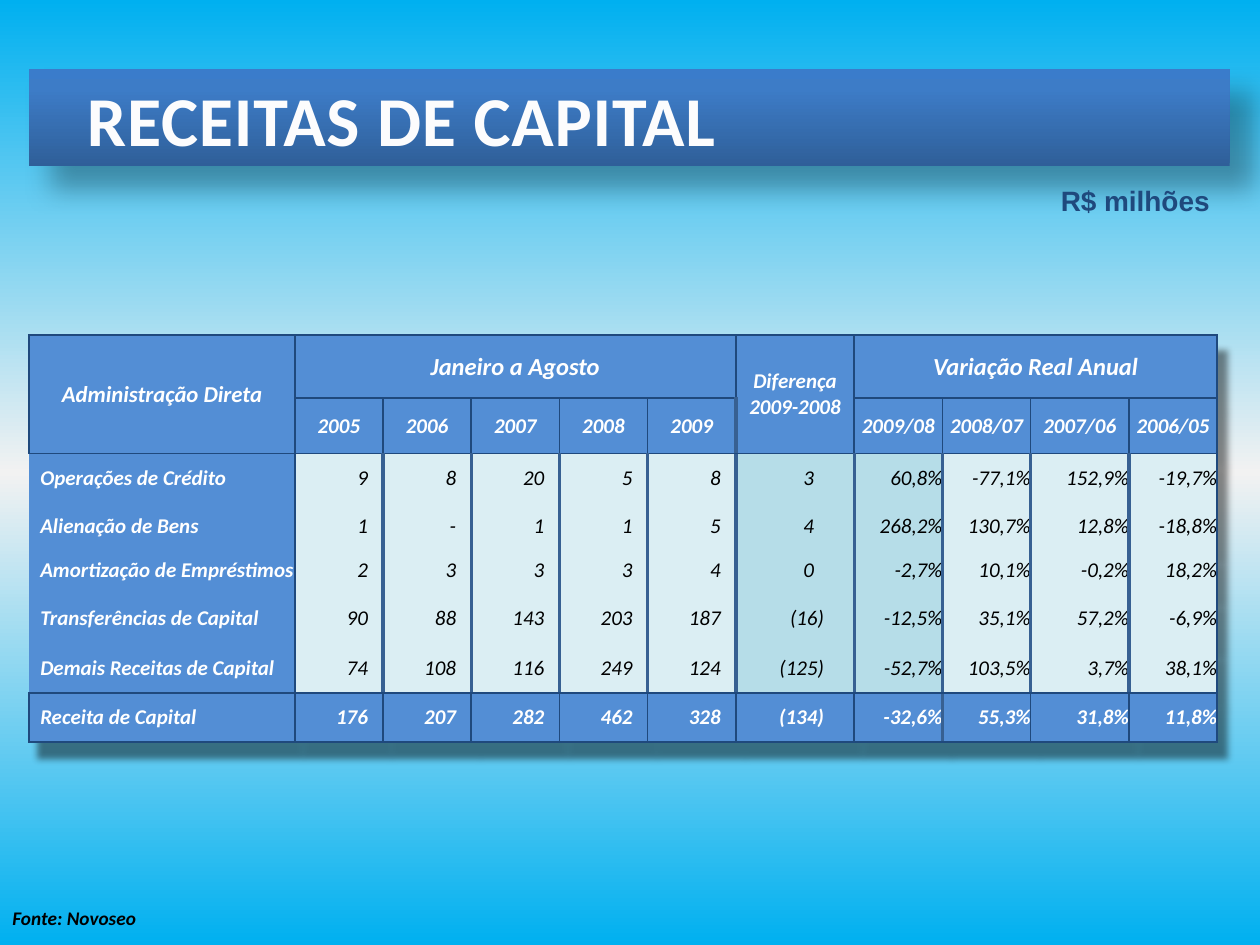
from dataclasses import dataclass

from lxml import etree
from pptx import Presentation
from pptx.dml.color import RGBColor
from pptx.enum.shapes import MSO_SHAPE
from pptx.enum.text import MSO_ANCHOR, MSO_AUTO_SIZE, PP_ALIGN
from pptx.oxml import parse_xml
from pptx.oxml.ns import nsdecls, qn
from pptx.util import Inches, Pt


@dataclass(frozen=True)
class Theme:
    width: float = 10
    height: float = 7.5
    font: str = "Calibri"
    unit_font: str = "Arial"
    sky: tuple = ((0, "00B0F0"), (50, "F2F2F2"), (100, "00B0F0"))
    banner: tuple = ((0, "2F5F99"), (80, "3D7CC7"), (100, "3A7CCB"))
    header: str = "538ED5"
    pale: str = "DBEEF3"
    accent: str = "B6DDE8"
    navy: str = "1F497D"
    divider: str = "376092"
    white: str = "FFFFFF"
    title_color: str = "FCFCFD"
    black: str = "000000"
    title: int = 40
    unit: int = 16
    group: int = 14
    corner: int = 13
    cell: int = 12
    source: int = 11


THEME = Theme()
THIN, THICK = (THEME.navy, 1), (THEME.divider, 2.25)

# Table content and grid, in inches
COLUMNS = [2.11] + [0.7] * 5 + [0.94, 0.7, 0.7, 0.78, 0.7]
ROWS = [0.5, 0.44, 0.39, 0.37, 0.34, 0.41, 0.39, 0.39]
DIFFERENCE, LAST = 6, len(COLUMNS) - 1
TOTAL = len(ROWS) - 1
GROUPS = [  # row, column, row span, column span, text, size
    (0, 0, 2, 1, "Administração Direta", THEME.corner),
    (0, 1, 1, 5, "Janeiro a Agosto", THEME.group),
    (0, 6, 2, 1, "Diferença\n2009-2008", THEME.cell),
    (0, 7, 1, 4, "Variação Real Anual", THEME.group),
]
PERIODS = {1: "2005", 2: "2006", 3: "2007", 4: "2008", 5: "2009",
           7: "2009/08", 8: "2008/07", 9: "2007/06", 10: "2006/05"}
REVENUES = [
    ("Operações de Crédito", "9 8 20 5 8 3 60,8% -77,1% 152,9% -19,7%"),
    ("Alienação de Bens", "1 - 1 1 5 4 268,2% 130,7% 12,8% -18,8%"),
    ("Amortização de Empréstimos", "2 3 3 3 4 0 -2,7% 10,1% -0,2% 18,2%"),
    ("Transferências de Capital", "90 88 143 203 187 (16) -12,5% 35,1% 57,2% -6,9%"),
    ("Demais Receitas de Capital", "74 108 116 249 124 (125) -52,7% 103,5% 3,7% 38,1%"),
    ("Receita de Capital", "176 207 282 462 328 (134) -32,6% 55,3% 31,8% 11,8%"),
]


def area(left, top, width, height):
    """Turn shares of the slide into lengths."""
    return (Inches(left * THEME.width), Inches(top * THEME.height),
            Inches(width * THEME.width), Inches(height * THEME.height))


def apply(target, values):
    for name, value in values.items():
        setattr(target, name, value)


def write(frame, text, size, color, align=PP_ALIGN.LEFT, font=THEME.font, bold=True, italic=False):
    frame.text = text
    for paragraph in frame.paragraphs:
        paragraph.alignment = align
        for run in paragraph.runs:
            apply(run.font, {"name": font, "size": Pt(size), "bold": bold, "italic": italic})
            run.font.color.rgb = RGBColor.from_string(color)


def set_gradient(fill, owner, stops):
    """Fill from bottom to top with the given stops."""
    fill.gradient()
    fill.gradient_angle = 90
    stop_list = owner.find(".//" + qn("a:gsLst"))
    for old in list(stop_list):
        stop_list.remove(old)
    for position, color in stops:
        stop = etree.SubElement(stop_list, qn("a:gs"), pos=str(position * 1000))
        etree.SubElement(stop, qn("a:srgbClr"), val=color)


def shadow(blur, distance, angle, alpha):
    return parse_xml(
        f'<a:effectLst {nsdecls("a")}><a:outerShdw blurRad="{Pt(blur)}" dist="{Pt(distance)}" '
        f'dir="{angle * 60000}" algn="tl" rotWithShape="0"><a:srgbClr val="{THEME.black}">'
        f'<a:alpha val="{alpha * 1000}"/></a:srgbClr></a:outerShdw></a:effectLst>')


def add_banner_title(slide):
    title = slide.shapes.title
    banner = slide.shapes.add_shape(MSO_SHAPE.RECTANGLE, *area(0.023, 0.073, 0.953, 0.103))
    title.element.addprevious(banner.element)
    banner.line.fill.background()
    set_gradient(banner.fill, banner.element, THEME.banner)
    banner.element.spPr.append(shadow(15, 18, 45, 30))

    left, top, width, height = area(0.055, 0.073, 0.922, 0.104)
    apply(title, {"left": left, "top": top, "width": width, "height": height})
    frame = title.text_frame
    apply(frame, {"vertical_anchor": MSO_ANCHOR.MIDDLE, "auto_size": MSO_AUTO_SIZE.NONE,
                  "margin_left": Inches(0.14)})
    write(frame, "RECEITAS DE CAPITAL", THEME.title, THEME.title_color)
    letters = frame.paragraphs[0].runs[0].font._element
    letters.set("spc", "50")
    letters.find(qn("a:latin")).addprevious(shadow(3, 3, 45, 40))


def add_label(slide, box, text, **style):
    frame = slide.shapes.add_textbox(*area(*box)).text_frame
    frame.word_wrap = True
    write(frame, text, **style)


def set_borders(cell, edges):
    """Draw the edges (left, right, top, bottom); None leaves one open."""
    properties = cell._tc.get_or_add_tcPr()
    for side, edge in zip("LRTB", edges):
        line = etree.SubElement(properties, qn(f"a:ln{side}"))
        if edge is None:
            etree.SubElement(line, qn("a:noFill"))
            continue
        color, points = edge
        line.set("w", str(Pt(points)))
        fill = etree.SubElement(line, qn("a:solidFill"))
        etree.SubElement(fill, qn("a:srgbClr"), val=color)


def cell_edges(row, column):
    if 2 <= row < TOTAL:  # body: only column dividers inside
        left = None if column == 0 else THIN if column == 1 else THICK
        right = THIN if column in (0, LAST) else THICK
        return left, right, THIN if row == 2 else None, THIN if row == TOTAL - 1 else None
    heavy_right = (row, column) in ((1, 5), (TOTAL, 7))
    heavy_left = (row, column) == (TOTAL, 8)
    return THICK if heavy_left else THIN, THICK if heavy_right else THIN, THIN, THIN


def cell_fill(row, column):
    if row < 2 or row == TOTAL or column == 0:
        return THEME.header
    return THEME.accent if column in (DIFFERENCE, DIFFERENCE + 1) else THEME.pale


def right_gap(column, value):
    """Line up digits, letting closing brackets hang to the right."""
    if column == DIFFERENCE:
        return 0.24 if value.endswith(")") else 0.32
    return 0.12 if column < DIFFERENCE else 0


def add_revenue_table(slide):
    frame = slide.shapes.add_table(len(ROWS), len(COLUMNS), Inches(0.23), Inches(2.66),
                                   Inches(sum(COLUMNS)), Inches(sum(ROWS)))
    table = frame.table
    properties = table._tbl.tblPr
    style = properties.find(qn("a:tableStyleId"))
    style.text = "{2D5ABB26-0587-4C30-8999-92F81FD0307C}"
    style.addprevious(shadow(4, 10.5, 60, 45))
    apply(table, {"first_row": False, "horz_banding": False})
    for column, width in zip(table.columns, COLUMNS):
        column.width = Inches(width)
    for row, height in zip(table.rows, ROWS):
        row.height = Inches(height)

    # Shared cell format
    for row in range(len(ROWS)):
        for column in range(len(COLUMNS)):
            cell = table.cell(row, column)
            apply(cell, {"margin_left": 0, "margin_right": 0, "margin_top": 0,
                         "margin_bottom": 0, "vertical_anchor": MSO_ANCHOR.MIDDLE})
            set_borders(cell, cell_edges(row, column))
            cell.fill.solid()
            cell.fill.fore_color.rgb = RGBColor.from_string(cell_fill(row, column))

    # Two header rows
    headings = GROUPS + [(1, column, 1, 1, period, THEME.cell) for column, period in PERIODS.items()]
    for row, column, height, width, text, size in headings:
        cell = table.cell(row, column)
        if height * width > 1:
            cell.merge(table.cell(row + height - 1, column + width - 1))
        write(cell.text_frame, text, size, THEME.white, PP_ALIGN.CENTER, italic=True)

    # Revenue rows and total
    for row, (revenue, values) in enumerate(REVENUES, start=2):
        name = table.cell(row, 0)
        name.margin_left = Inches(0.09)
        write(name.text_frame, revenue, THEME.cell, THEME.white, italic=True)
        is_total = row == TOTAL
        for column, value in enumerate(values.split(), start=1):
            cell = table.cell(row, column)
            cell.margin_right = Inches(right_gap(column, value))
            write(cell.text_frame, value, THEME.cell, THEME.white if is_total else THEME.black,
                  PP_ALIGN.RIGHT, bold=is_total, italic=True)


def main():
    deck = Presentation()
    apply(deck, {"slide_width": Inches(THEME.width), "slide_height": Inches(THEME.height)})
    slide = deck.slides.add_slide(deck.slide_layouts[5])
    set_gradient(slide.background.fill, slide.element, THEME.sky)
    add_banner_title(slide)
    add_label(slide, (0.797, 0.188, 0.173, 0.049), "R$ milhões", size=THEME.unit,
              color=THEME.navy, align=PP_ALIGN.RIGHT, font=THEME.unit_font)
    add_label(slide, (0, 0.952, 0.406, 0.039), "Fonte: Novoseo", size=THEME.source,
              color=THEME.black, italic=True)
    add_revenue_table(slide)
    deck.save("out.pptx")


if __name__ == "__main__":
    main()
